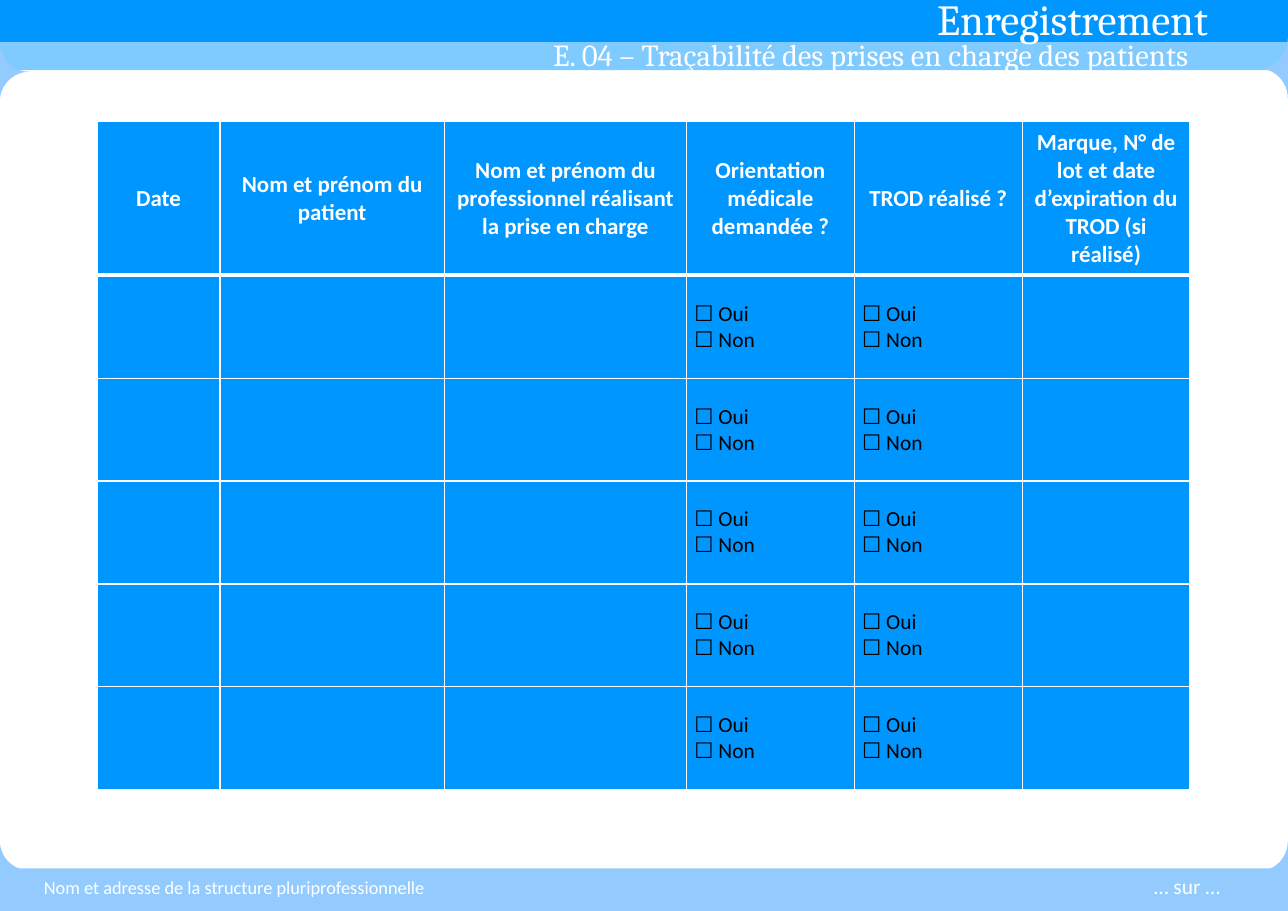
from lxml import etree
from pptx import Presentation
from pptx import util as u
from pptx.dml.color import RGBColor
from pptx.enum import shapes, text
from pptx.oxml import ns

BLUE = RGBColor(0x00, 0x96, 0xFF)
LIGHT_BLUE = RGBColor(0x93, 0xCB, 0xFF)
WHITE = RGBColor(0xFF, 0xFF, 0xFF)
BLACK = RGBColor(0x00, 0x00, 0x00)

# Content
SECTION = "Enregistrement"
TITLE = "E. 04 – Traçabilité des prises en charge des patients"
STRUCTURE = "Nom et adresse de la structure pluriprofessionnelle"
PAGE = "… sur …"
HEADERS = [
    "Date",
    "Nom et prénom du patient",
    "Nom et prénom du professionnel réalisant la prise en charge",
    "Orientation médicale demandée\u00a0?",
    "TROD réalisé\u00a0?",
    "Marque, N° de lot et date d’expiration du TROD (si réalisé)",
]
CHOICES = ["☐ Oui", "☐ Non"]
CHOICE_COLUMNS = (3, 4)
ENTRY_ROWS = 5

# Geometry in centimetres
SLIDE_WIDTH, SLIDE_HEIGHT = 29.7, 21
COLUMN_WIDTHS = [2.83, 5.18, 5.58, 3.87, 3.87, 3.87]
HEADER_HEIGHT, ENTRY_HEIGHT = 3.55, 2.37
TABLE_LEFT, TABLE_TOP = 2.24, 2.8
CORNER_WIDTH, CORNER_HEIGHT = 2.97, 1.37
CORNER_LEFT, CORNER_RIGHT = -2.29, 29.01

BANDS = [  # top, height, colour, opacity in percent
    (0.86, 0.76, BLUE, 50),
    (0, 0.97, BLUE, 100),
    (20.02, 0.98, LIGHT_BLUE, 100),
]
CORNERS = [(CORNER_LEFT, 0.97), (CORNER_RIGHT, 0.89),
           (CORNER_LEFT, 19.38), (CORNER_RIGHT, 19.4)]

SECTION_FONT = dict(name="Cambria", size=u.Pt(28))
TITLE_FONT = dict(name="Cambria", size=u.Pt(20))
PAGE_FONT = dict(name="Calibri", size=u.Pt(14))
STRUCTURE_FONT = dict(name="Calibri", size=u.Pt(12))
HEADER_FONT = dict(name="Calibri", size=u.Pt(15), bold=True)
CHOICE_FONT = dict(name="Calibri", size=u.Pt(14), bold=False)


def set_fill(fill, color, opacity=100):
    fill.solid()
    fill.fore_color.rgb = color
    if opacity < 100:
        color_element = fill._xPr.find(".//" + ns.qn("a:srgbClr"))
        etree.SubElement(color_element, ns.qn("a:alpha"), val=str(opacity * 1000))


def add_block(slide, preset, box, color, opacity=100):
    shape = slide.shapes.add_shape(preset, *map(u.Cm, box))
    shape.shadow.inherit = False
    shape.line.fill.background()
    set_fill(shape.fill, color, opacity)
    return shape


def write(frame, lines, font_format, color, align=text.PP_ALIGN.LEFT, spacing=1.0):
    frame.text = "\n".join(lines)
    for paragraph in frame.paragraphs:
        paragraph.alignment = align
        paragraph.line_spacing = spacing
        for run in paragraph.runs:
            for name, value in font_format.items():
                setattr(run.font, name, value)
            run.font.color.rgb = color


def add_label(slide, box, label, font_format, anchor=text.MSO_ANCHOR.TOP, **options):
    frame = slide.shapes.add_textbox(*map(u.Cm, box)).text_frame
    frame.word_wrap = True
    frame.vertical_anchor = anchor
    write(frame, [label], font_format, WHITE, **options)


def set_borders(cell, widths):
    properties = cell._tc.get_or_add_tcPr()
    for side, points in widths.items():
        line = etree.SubElement(properties, ns.qn("a:ln" + side), w=str(u.Pt(points)))
        fill = etree.SubElement(line, ns.qn("a:solidFill"))
        etree.SubElement(fill, ns.qn("a:srgbClr"), val=str(WHITE))


def add_register(slide):
    height = HEADER_HEIGHT + ENTRY_ROWS * ENTRY_HEIGHT
    box = TABLE_LEFT, TABLE_TOP, sum(COLUMN_WIDTHS), height
    table = slide.shapes.add_table(
        ENTRY_ROWS + 1, len(HEADERS), *map(u.Cm, box)).table
    table.first_row = table.horz_banding = False
    for column, width in zip(table.columns, COLUMN_WIDTHS):
        column.width = u.Cm(width)
    for i, row in enumerate(table.rows):
        row.height = u.Cm(ENTRY_HEIGHT if i else HEADER_HEIGHT)
        for j, cell in enumerate(row.cells):
            cell.vertical_anchor = text.MSO_ANCHOR.MIDDLE
            cell.margin_left = cell.margin_right = u.Cm(0.18)
            cell.margin_top = cell.margin_bottom = 0
            set_borders(cell, dict(L=1, R=1, T=3 if i == 1 else 1, B=1 if i else 3))
            set_fill(cell.fill, BLUE, 20 if i else 100)
            if i == 0:
                write(cell.text_frame, [HEADERS[j]], HEADER_FONT, WHITE,
                      align=text.PP_ALIGN.CENTER)
            elif j in CHOICE_COLUMNS:
                write(cell.text_frame, CHOICES, CHOICE_FONT, BLACK)


def main():
    presentation = Presentation()
    presentation.slide_width = u.Cm(SLIDE_WIDTH)
    presentation.slide_height = u.Cm(SLIDE_HEIGHT)
    slide = presentation.slides.add_slide(presentation.slide_layouts[5])

    # Coloured bands and rounded panel corners
    for top, height, color, opacity in BANDS:
        add_block(slide, shapes.MSO_SHAPE.RECTANGLE,
                  (0, top, SLIDE_WIDTH, height), color, opacity)
    for left, top in CORNERS:
        corner = add_block(slide, shapes.MSO_SHAPE.PLAQUE,
                           (left, top, CORNER_WIDTH, CORNER_HEIGHT), LIGHT_BLUE)
        corner.adjustments[0] = 0.5

    # Heading, with the title in front of the bands
    add_label(slide, (21.36, -0.3, 7.16, 1.45), SECTION, SECTION_FONT)
    title = slide.shapes.title
    title.left, title.top, title.width, title.height = map(
        u.Cm, (5.54, 0.94, 22.12, 0.71))
    title.text_frame.vertical_anchor = text.MSO_ANCHOR.MIDDLE
    title.text_frame.auto_size = text.MSO_AUTO_SIZE.NONE
    write(title.text_frame, [TITLE], TITLE_FONT, WHITE,
          align=text.PP_ALIGN.RIGHT, spacing=0.9)
    slide.shapes._spTree.append(title._element)

    # Register and footer
    add_register(slide)
    add_label(slide, (21.89, 20.14, 6.5, 0.56), PAGE, PAGE_FONT,
              anchor=text.MSO_ANCHOR.MIDDLE, align=text.PP_ALIGN.RIGHT)
    add_label(slide, (0.76, 20.14, 9.53, 0.86), STRUCTURE, STRUCTURE_FONT, spacing=0.9)

    presentation.save("out.pptx")


if __name__ == "__main__":
    main()
